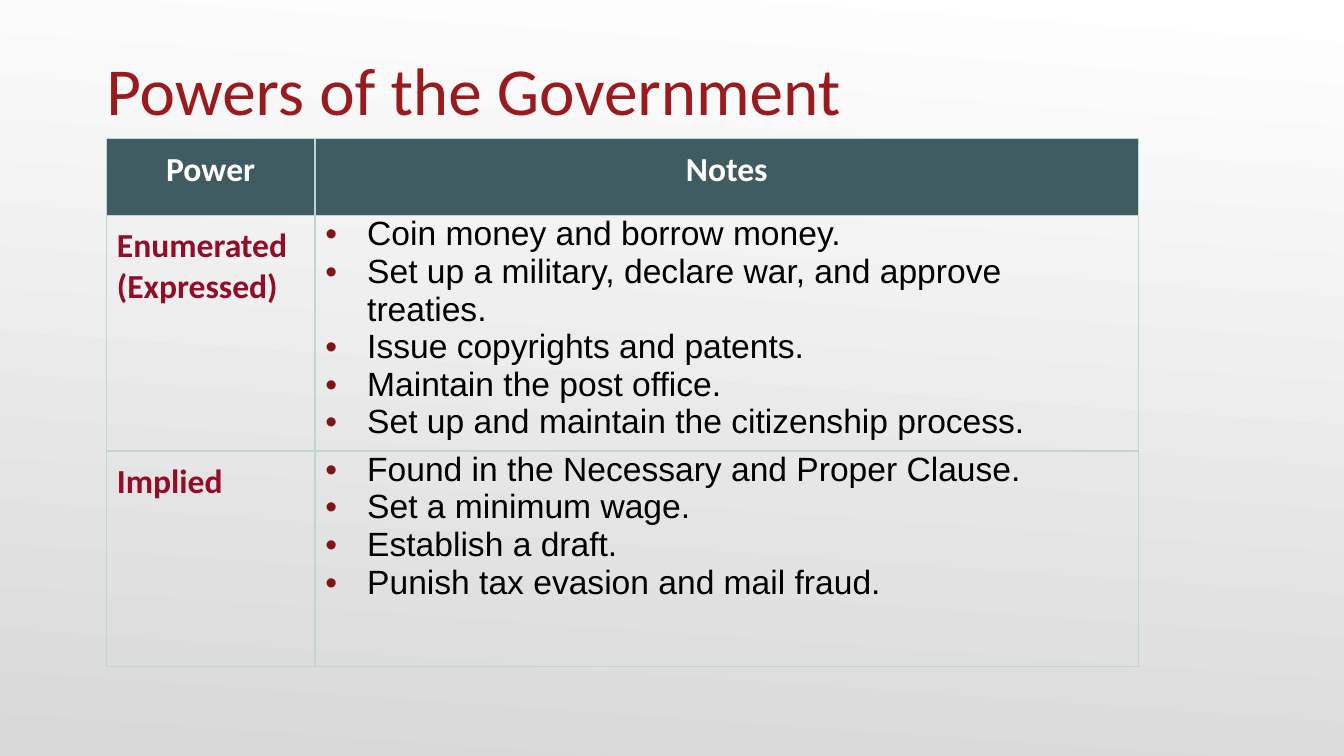
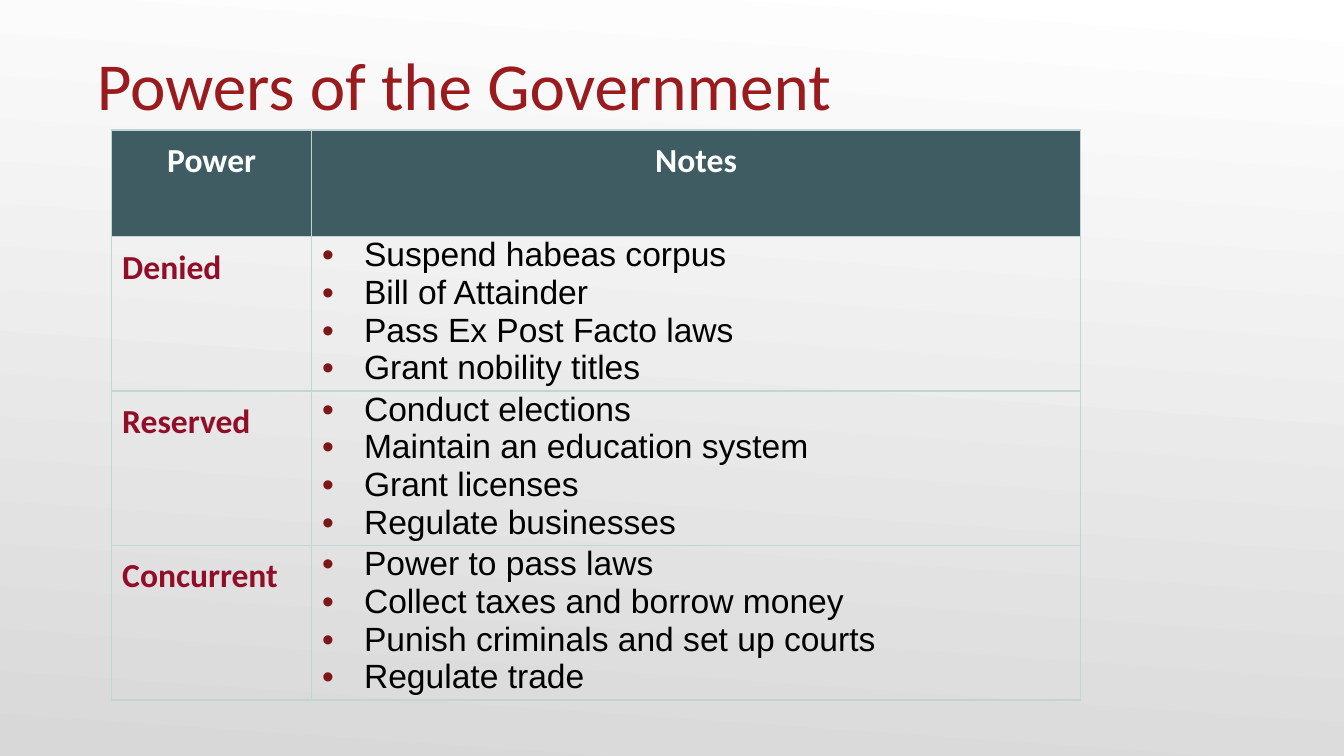
"""Build two slides of tables on the powers of the government."""
from lxml import etree
from pptx import Presentation
from pptx.dml.color import RGBColor
from pptx.enum import text
from pptx.oxml import ns
from pptx.util import Cm, Pt

TITLE_RED = RGBColor(0x99, 0x1B, 0x1E)
POWER_RED = RGBColor(0x91, 0x0D, 0x28)
BULLET_RED = RGBColor(0x7D, 0x16, 0x19)
TEAL = RGBColor(0x3E, 0x5C, 0x61)
MINT = RGBColor(0xBE, 0xD7, 0xD3)
WHITE = RGBColor(0xFF, 0xFF, 0xFF)
GREY = RGBColor(0xD8, 0xD8, 0xD8)
BLACK = RGBColor(0x00, 0x00, 0x00)

TITLE = "Powers of the Government"
HEADERS = ("Power", "Notes")
TITLE_SIZE = (22.86, 1.78)
INSET = 0.2
INDENT = 0.79

SLIDES = [
    {
        "title_at": (2.01, 0.66),
        "table_at": (2.01, 2.62),
        "cols": (3.94, 15.57),
        "rows": (1.45, 4.45, 4.08),
        "powers": [
            ("Enumerated (Expressed)", [
                "Coin money and borrow money.",
                "Set up a military, declare war, and approve treaties.",
                "Issue copyrights and patents.",
                "Maintain the post office.",
                "Set up and maintain the citizenship process.",
            ]),
            ("Implied", [
                "Found in the Necessary and Proper Clause.",
                "Set a minimum wage.",
                "Establish a draft.",
                "Punish tax evasion and mail fraud.",
            ]),
        ],
    },
    {
        "title_at": (1.83, 0.56),
        "table_at": (2.11, 2.46),
        "cols": (3.78, 14.53),
        "rows": (2.01, 2.92, 2.92, 2.92),
        "powers": [
            ("Denied", [
                "Suspend habeas corpus",
                "Bill of Attainder",
                "Pass Ex Post Facto laws",
                "Grant nobility titles",
            ]),
            ("Reserved", [
                "Conduct elections",
                "Maintain an education system",
                "Grant licenses",
                "Regulate businesses",
            ]),
            ("Concurrent", [
                "Power to pass laws",
                "Collect taxes and borrow money",
                "Punish criminals and set up courts",
                "Regulate trade",
            ]),
        ],
    },
]


def sub(parent, tag, **attrs):
    """Append a DrawingML element."""
    return etree.SubElement(parent, ns.qn(f"a:{tag}"), attrs)


def add_bullet(p):
    """Give a paragraph a hanging red bullet."""
    pPr = p._p.get_or_add_pPr()
    pPr.set("marL", str(Cm(INDENT)))
    pPr.set("indent", str(-Cm(INDENT)))
    sub(sub(pPr, "buClr"), "srgbClr", val=str(BULLET_RED))
    sub(pPr, "buFont", typeface="Arial")
    sub(pPr, "buChar", char="•")


def write(tf, lines, size=18, font="Calibri", color=BLACK, bold=False,
          align=text.PP_ALIGN.LEFT, bullet=False):
    """Fill a text frame with one formatted paragraph per line."""
    for i, line in enumerate(lines):
        p = tf.add_paragraph() if i else tf.paragraphs[0]
        p.alignment = align
        if bullet:
            add_bullet(p)
        r = p.add_run()
        r.text = line
        r.font.size, r.font.name, r.font.bold = Pt(size), font, bold
        r.font.color.rgb = color


def format_cell(cell, fill=None, inset_y=INSET):
    """Set the borders, fill and margins of a cell."""
    tcPr = cell._tc.get_or_add_tcPr()
    for side in "LRTB":
        ln = sub(tcPr, f"ln{side}", w=str(Pt(1)))
        sub(sub(ln, "solidFill"), "srgbClr", val=str(MINT))
    if fill is None:
        cell.fill.background()
    else:
        cell.fill.solid()
        cell.fill.fore_color.rgb = fill
    cell.margin_left = cell.margin_right = Cm(INSET)
    cell.margin_top = cell.margin_bottom = Cm(inset_y)


def set_background(master):
    """Give every slide the white to grey gradient."""
    fill = master.background.fill
    fill.gradient()
    fill.gradient_angle = 266
    for stop, color in zip(fill.gradient_stops, (WHITE, GREY)):
        stop.color.rgb = color


def add_title(s, at):
    """Place and format the slide title."""
    sp = s.shapes.title
    sp.left, sp.top, sp.width, sp.height = map(Cm, at + TITLE_SIZE)
    tf = sp.text_frame
    tf.auto_size = text.MSO_AUTO_SIZE.NONE
    tf.vertical_anchor = text.MSO_ANCHOR.BOTTOM
    tf.margin_left = tf.margin_right = tf.margin_bottom = 0
    tf.margin_top = Cm(0.13)
    write(tf, [TITLE], size=36, color=TITLE_RED)


def add_powers(s, at, cols, rows, powers):
    """Add the table of powers and their notes."""
    size = (sum(cols), sum(rows))
    table = s.shapes.add_table(len(rows), len(cols), *map(Cm, at + size)).table
    table.horz_banding = False
    for col, width in zip(table.columns, cols):
        col.width = Cm(width)
    for row, height in zip(table.rows, rows):
        row.height = Cm(height)
    for c, header in enumerate(HEADERS):
        cell = table.cell(0, c)
        format_cell(cell, fill=TEAL)
        write(cell.text_frame, [header], color=WHITE, bold=True,
              align=text.PP_ALIGN.CENTER)
    for i, (power, notes) in enumerate(powers, 1):
        name_cell, notes_cell = table.cell(i, 0), table.cell(i, 1)
        format_cell(name_cell)
        write(name_cell.text_frame, [power], color=POWER_RED, bold=True)
        format_cell(notes_cell, inset_y=0)
        write(notes_cell.text_frame, notes, font="Arial", bullet=True)


def main():
    """Build and save the presentation."""
    prs = Presentation()
    prs.slide_width, prs.slide_height = Cm(25.4), Cm(14.29)
    set_background(prs.slide_master)
    for item in SLIDES:
        s = prs.slides.add_slide(prs.slide_layouts[5])
        add_title(s, item["title_at"])
        add_powers(s, item["table_at"], item["cols"], item["rows"],
                   item["powers"])
    prs.save("out.pptx")


if __name__ == "__main__":
    main()
